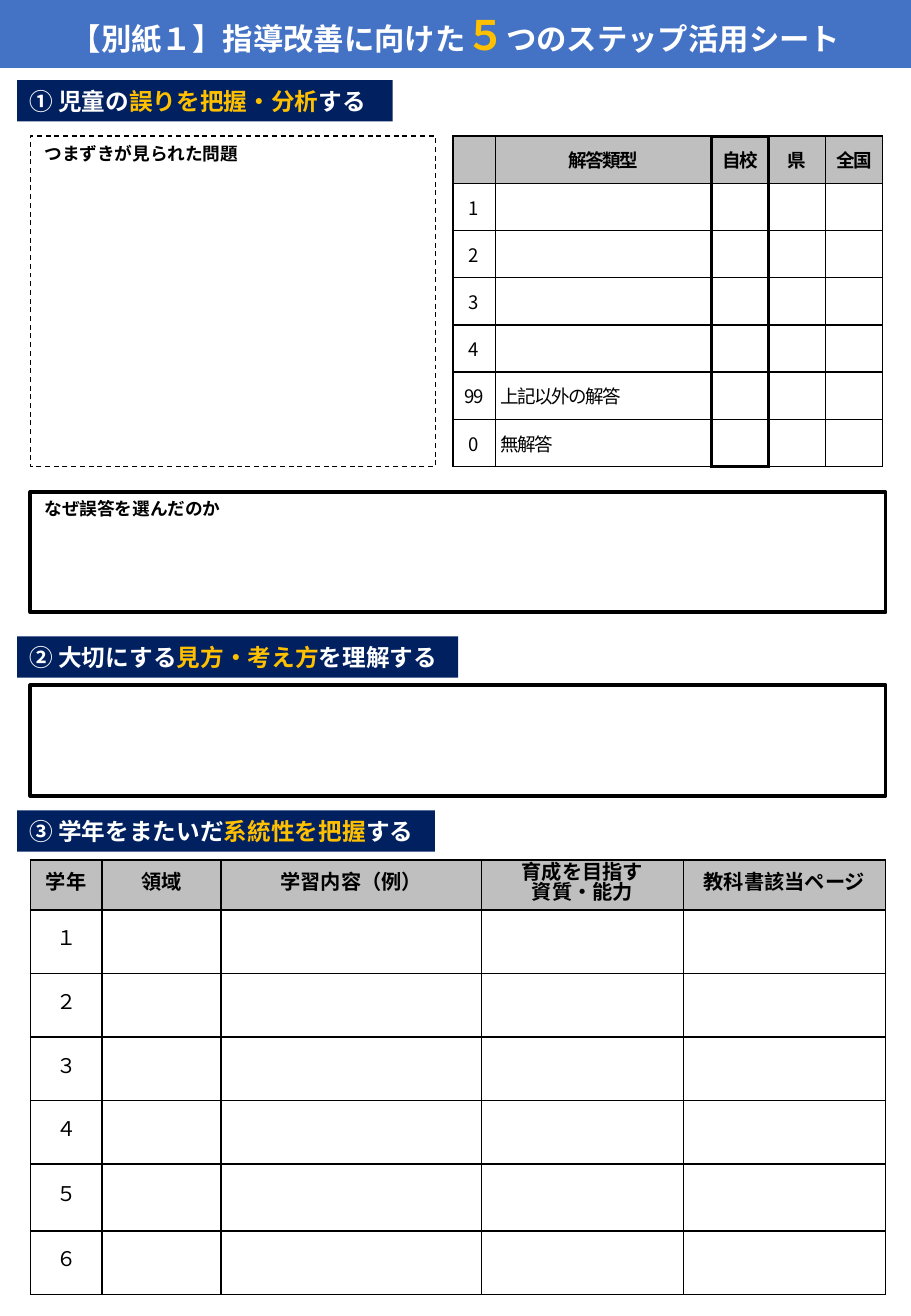
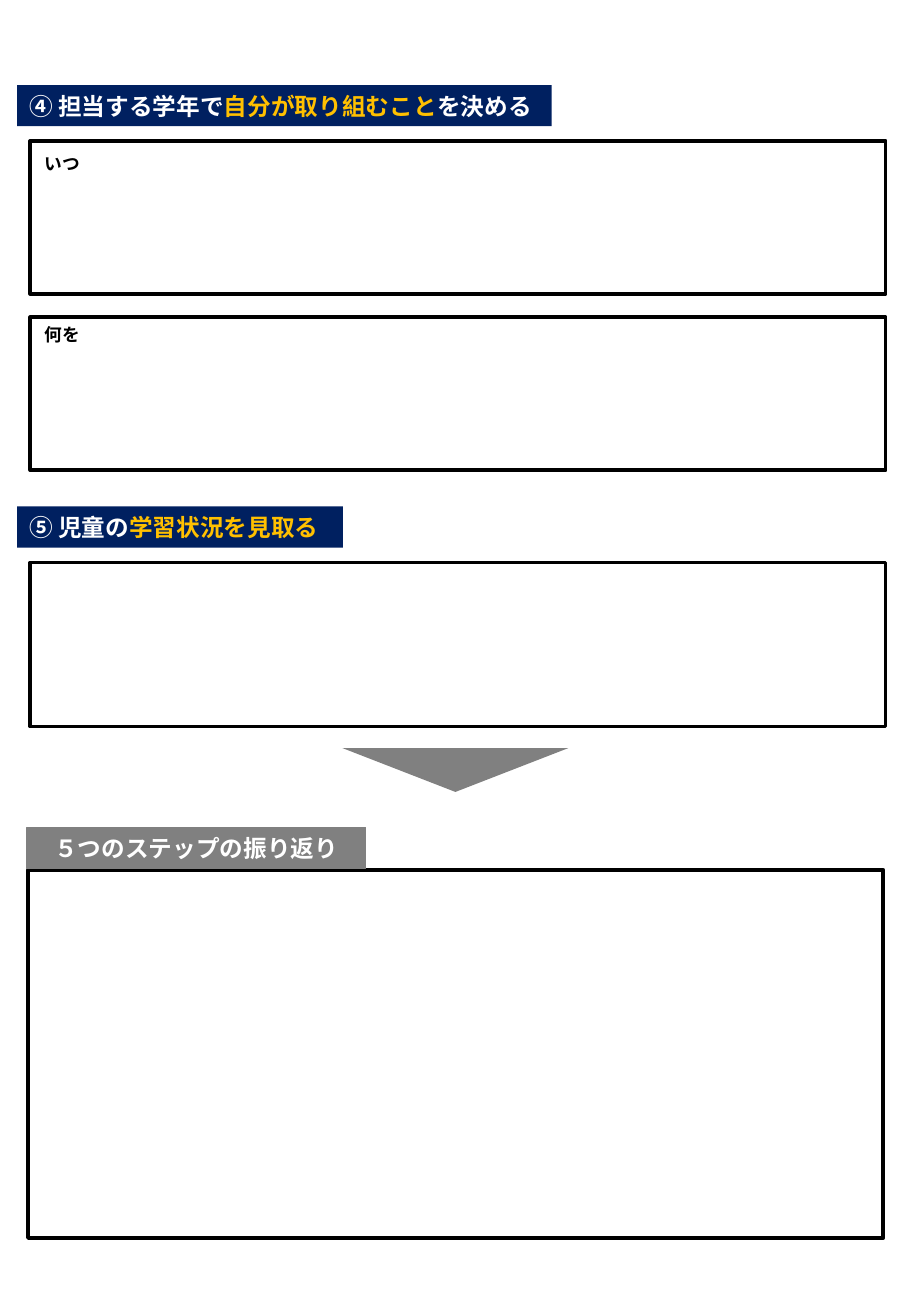
import lxml.etree
import pptx
import pptx.dml.color
import pptx.enum.dml
import pptx.enum.shapes
import pptx.enum.text
import pptx.oxml.ns
import pptx.util

Pt = pptx.util.Pt
RGBColor = pptx.dml.color.RGBColor
SHAPE = pptx.enum.shapes.MSO_SHAPE
ALIGN = pptx.enum.text.PP_ALIGN
MIDDLE = pptx.enum.text.MSO_ANCHOR.MIDDLE

WHITE = RGBColor(0xFF, 0xFF, 0xFF)
BLACK = RGBColor(0x00, 0x00, 0x00)
BLUE = RGBColor(0x44, 0x72, 0xC4)
NAVY = RGBColor(0x00, 0x20, 0x60)
GOLD = RGBColor(0xFF, 0xC0, 0x00)
GRAY = RGBColor(0x80, 0x80, 0x80)
HEADER_GRAY = RGBColor(0xBF, 0xBF, 0xBF)

ASIAN_FONT = "Noto Sans CJK JP"
SLIDE_WIDTH, SLIDE_HEIGHT = 540, 780
FRAME_LEFT, FRAME_WIDTH = 18, 507
BAND_LEFT, BAND_HEIGHT = 10.2, 24.4
LABEL_LEFT, LABEL_WIDTH, LABEL_HEIGHT = 19.4, 208, 18.7
THIN, THICK = 1, 2.25

TITLE_STYLE = {"size": Pt(18), "name": "Arial", "bold": True}
BAND_STYLE = {"size": Pt(14), "name": "Arial", "bold": True}
LABEL_STYLE = {"size": Pt(10.5), "name": "Arial", "bold": True}

TITLE = [
    ("【別紙１】指導改善に向けた", WHITE, {}),
    ("５", GOLD, {"size": Pt(24)}),
    ("つのステップ活用シート", WHITE, {}),
]

PAGES = [
    {
        "frames": [(291.6, 71.3), (406.1, 65.5)],
        "bands": [
            (47.5, 222.5, ["① 児童の", "誤りを把握・分析", "する"]),
            (377.2, 261.4, ["② 大切にする", "見方・考え方", "を理解する"]),
            (480.4, 247.7, ["③ 学年をまたいだ", "系統性を把握", "する"]),
        ],
        "labels": [(81.5, "つまずきが見られた問題"), (292.3, "なぜ誤答を選んだのか")],
    },
    {
        "frames": [(83.5, 90.7), (188, 90.7), (333.4, 97.2)],
        "bands": [
            (50.4, 316.8, ["④ 担当する学年で", "自分が取り組むこと", "を決める"]),
            (300.2, 193, ["⑤ 児童の", "学習状況を見取る"]),
        ],
        "labels": [(87.8, "いつ"), (188.9, "何を")],
    },
]

PROBLEM_FRAME = (FRAME_LEFT, 80.7, 240, 196)
REFLECTION_FRAME = (16.6, 515.6, FRAME_WIDTH, 218.2)
REFLECTION_BAND = (16, 490.4, 200.9, BAND_HEIGHT)
REFLECTION = "５つのステップの振り返り"
ARROW = (203, 443.4, 133.9, 26)

ANSWER_TABLE = {
    "place": (268.4, 80.7),
    "columns": [25.2, 128.2, 33.8, 33.8, 33.8],
    "heights": [28] * 7,
    "rows": [
        ["", "解答類型", "自校", "県", "全国"],
        ["1"], ["2"], ["3"], ["4"],
        ["99", "上記以外の解答"],
        ["0", "無解答"],
    ],
    "size": 11,
    "spacing": -90,
    "line": None,
    "framed_column": 2,
}
GRADE_TABLE = {
    "place": (FRAME_LEFT, 509.7),
    "columns": [42.5, 70.6, 154.3, 119.8, 119.8],
    "heights": [29.6] + [37.7] * 4 + [39.6, 37.7],
    "rows": [
        ["学年", "領域", "学習内容（例）", "育成を目指す\n資質・能力", "教科書該当ページ"],
        ["１"], ["２"], ["３"], ["４"], ["５"], ["６"],
    ],
    "size": 12,
    "spacing": None,
    "line": 12,
    "framed_column": None,
}


def assign(target, values):
    for name, value in values.items():
        setattr(target, name, value)


def add_run(paragraph, text, color, style, spacing=None):
    run = paragraph.add_run()
    run.text = text
    assign(run.font, style)
    run.font.color.rgb = color
    properties = run.font._element
    if spacing is not None:
        properties.set("spc", str(spacing))
    asian = lxml.etree.SubElement(properties, pptx.oxml.ns.qn("a:ea"))
    asian.set("typeface", ASIAN_FONT)


def write(shape, runs, style, align=ALIGN.LEFT):
    assign(shape.text_frame, {
        "word_wrap": True,
        "auto_size": pptx.enum.text.MSO_AUTO_SIZE.NONE,
        "vertical_anchor": MIDDLE,
    })
    paragraph = shape.text_frame.paragraphs[0]
    paragraph.alignment = align
    for text, color, changes in runs:
        add_run(paragraph, text, color, {**style, **changes})


def add_box(slide, place, fill=None, line=None, width=THICK, kind=SHAPE.RECTANGLE):
    shape = slide.shapes.add_shape(kind, *map(Pt, place))
    shape.shadow.inherit = False
    if fill is None:
        shape.fill.background()
    else:
        shape.fill.solid()
        shape.fill.fore_color.rgb = fill
    if line is None:
        shape.line.fill.background()
    else:
        shape.line.color.rgb = line
        shape.line.width = Pt(width)
    return shape


def add_sections(slide, page):
    for top, height in page["frames"]:
        add_box(slide, (FRAME_LEFT, top, FRAME_WIDTH, height), line=BLACK)
    for top, width, parts in page["bands"]:
        band = add_box(slide, (BAND_LEFT, top, width, BAND_HEIGHT), NAVY)
        write(band, [(part, color, {}) for part, color in zip(parts, (WHITE, GOLD, WHITE))], BAND_STYLE)
    for top, text in page["labels"]:
        label = slide.shapes.add_textbox(*map(Pt, (LABEL_LEFT, top, LABEL_WIDTH, LABEL_HEIGHT)))
        write(label, [(text, BLACK, {})], LABEL_STYLE)


def add_borders(cell, widths):
    properties = cell._tc.get_or_add_tcPr()
    for side in "LRTB":
        line = lxml.etree.SubElement(properties, pptx.oxml.ns.qn("a:ln" + side))
        line.set("w", str(int(Pt(widths[side]))))
        fill = lxml.etree.SubElement(line, pptx.oxml.ns.qn("a:solidFill"))
        lxml.etree.SubElement(fill, pptx.oxml.ns.qn("a:srgbClr")).set("val", str(BLACK))


def border_widths(row, column, last_row, framed):
    inside = column == framed
    before = framed is not None and column == framed - 1
    after = framed is not None and column == framed + 1
    return {
        "L": THICK if inside or after else THIN,
        "R": THICK if inside or before else THIN,
        "T": THICK if inside and row == 0 else THIN,
        "B": THICK if inside and row == last_row else THIN,
    }


def add_grid(slide, data):
    columns, heights, rows = data["columns"], data["heights"], data["rows"]
    size = (sum(columns), sum(heights))
    graphic = slide.shapes.add_table(len(rows), len(columns), *map(Pt, data["place"] + size))
    table = graphic.table
    assign(table, {"first_row": False, "horz_banding": False})
    for column, width in zip(table.columns, columns):
        column.width = Pt(width)
    for row, height in zip(table.rows, heights):
        row.height = Pt(height)
    for row, texts in enumerate(rows):
        header = row == 0
        style = {"size": Pt(data["size"]), "name": "Calibri" if header else ASIAN_FONT, "bold": header}
        for column in range(len(columns)):
            cell = table.cell(row, column)
            add_borders(cell, border_widths(row, column, len(rows) - 1, data["framed_column"]))
            cell.fill.solid()
            cell.fill.fore_color.rgb = HEADER_GRAY if header else WHITE
            assign(cell, {
                "vertical_anchor": MIDDLE,
                "margin_left": Pt(3),
                "margin_right": Pt(3),
                "margin_top": 0,
                "margin_bottom": 0,
            })
            text = texts[column] if column < len(texts) else ""
            if not text:
                continue
            for index, line in enumerate(text.split("\n")):
                frame = cell.text_frame
                paragraph = frame.add_paragraph() if index else frame.paragraphs[0]
                paragraph.alignment = ALIGN.CENTER if header or column == 0 else ALIGN.LEFT
                if data["line"]:
                    paragraph.line_spacing = Pt(data["line"])
                add_run(paragraph, line, BLACK, style, data["spacing"])


def add_title(slide):
    title = slide.shapes.title
    assign(title, {"left": 0, "top": 0, "width": Pt(SLIDE_WIDTH), "height": Pt(40.3)})
    title.fill.solid()
    title.fill.fore_color.rgb = BLUE
    write(title, TITLE, TITLE_STYLE, ALIGN.CENTER)


def main():
    presentation = pptx.Presentation()
    assign(presentation, {"slide_width": Pt(SLIDE_WIDTH), "slide_height": Pt(SLIDE_HEIGHT)})
    title_only, blank = presentation.slide_layouts[5], presentation.slide_layouts[6]

    analysis = presentation.slides.add_slide(title_only)
    add_title(analysis)
    add_sections(analysis, PAGES[0])
    problem = add_box(analysis, PROBLEM_FRAME, line=BLACK, width=0.75)
    problem.line.dash_style = pptx.enum.dml.MSO_LINE.DASH
    for data in (ANSWER_TABLE, GRADE_TABLE):
        add_grid(analysis, data)

    action = presentation.slides.add_slide(blank)
    add_sections(action, PAGES[1])
    add_box(action, REFLECTION_FRAME, line=BLACK)
    heading = add_box(action, REFLECTION_BAND, GRAY, GRAY, 0.75)
    write(heading, [(REFLECTION, WHITE, {})], BAND_STYLE, ALIGN.CENTER)
    arrow = add_box(action, ARROW, GRAY, kind=SHAPE.ISOSCELES_TRIANGLE)
    arrow.rotation = 180

    presentation.save("out.pptx")


if __name__ == "__main__":
    main()
